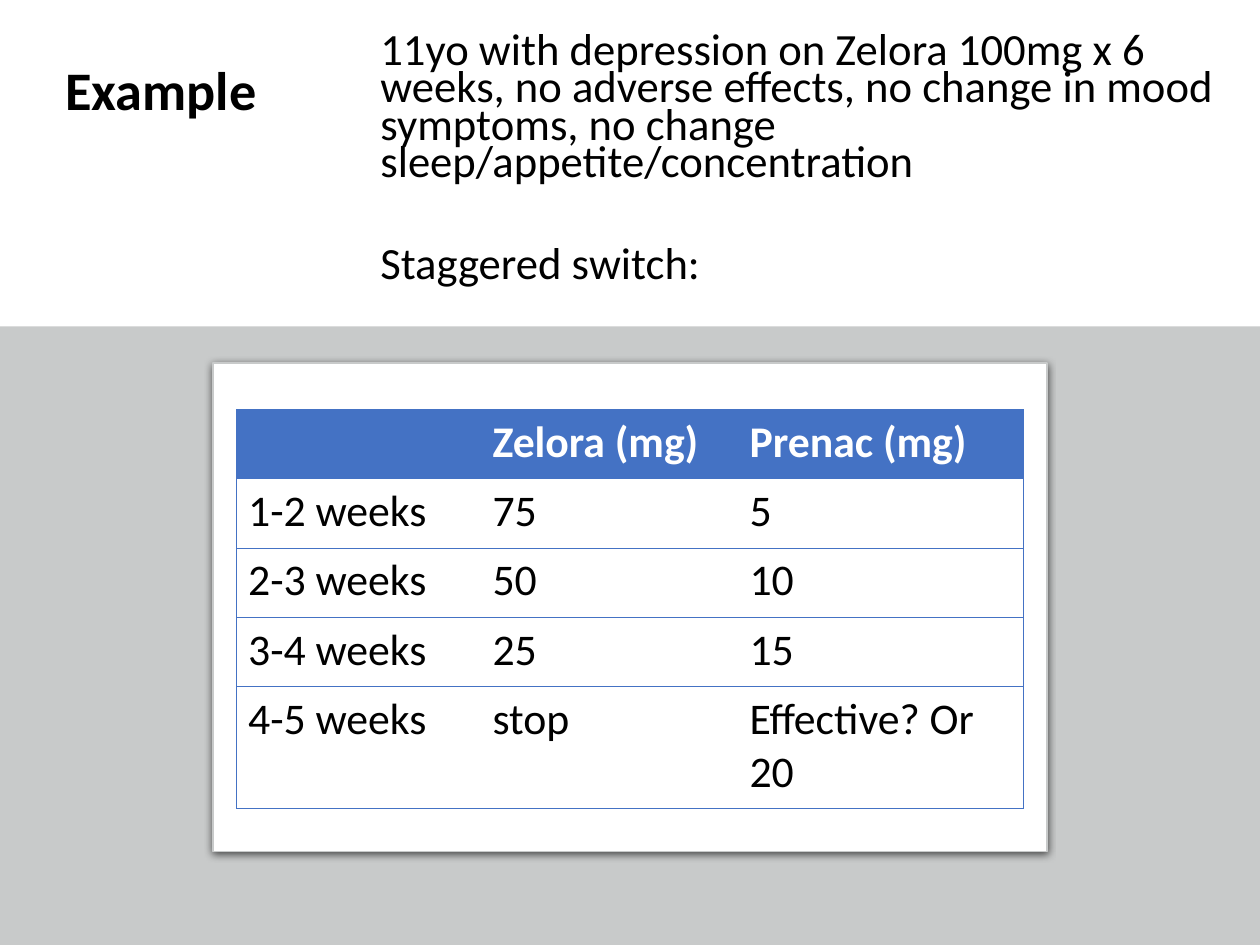
from lxml import etree
from pptx import Presentation
from pptx.dml.color import RGBColor
from pptx.enum import shapes, text
from pptx.oxml import ns
from pptx.util import Inches, Pt

TITLE = "Example"
CASE = [
    "11yo with depression on Zelora 100mg x 6 weeks, no adverse effects, "
    "no change in mood symptoms, no change sleep/appetite/concentration",
    "Staggered switch:",
]
SCHEDULE = [
    ("", "Zelora (mg)", "Prenac (mg)"),
    ("1-2 weeks", "75", "5"),
    ("2-3 weeks", "50", "10"),
    ("3-4 weeks", "25", "15"),
    ("4-5 weeks", "stop", "Effective? Or 20"),
]
COLUMNS = (1.94, 2.04, 2.26)
ROWS = (0.55, 0.55, 0.55, 0.55, 0.97)
THEME = {
    "font": "Calibri", "title": 31, "body": 25.5, "table": 25,
    "ink": "000000", "paper": "FFFFFF", "band": "C8CACA", "accent": "4472C4",
}


def color(role):
    return RGBColor.from_string(THEME[role])


def box(left, top, width, height):
    return [Inches(n) for n in (left, top, width, height)]


def style(paragraph, size, ink="ink", bold=False):
    font = paragraph.font
    font.name, font.size, font.bold = THEME["font"], Pt(THEME[size]), bold
    font.color.rgb = color(ink)


def add_panel(slide, kind, place, fill):
    panel = slide.shapes.add_shape(kind, *box(*place))
    panel.shadow.inherit = False
    panel.fill.solid()
    panel.fill.fore_color.rgb = color(fill)
    panel.line.fill.background()
    return panel


def add_soft_shadow(shape):
    effects = shape._element.spPr.find(ns.qn("a:effectLst"))
    shadow = etree.SubElement(effects, ns.qn("a:outerShdw"), blurRad=str(Pt(4.5)),
                              dist=str(Pt(1.5)), dir="5400000", rotWithShape="0")
    ink = etree.SubElement(shadow, ns.qn("a:srgbClr"), val=THEME["ink"])
    etree.SubElement(ink, ns.qn("a:alpha"), val="63000")


def set_borders(cell, drawn):
    """Rule the sides named in drawn (of L, R, T, B) and clear the others."""
    properties = cell._tc.get_or_add_tcPr()
    for side in "LRTB":
        line = etree.SubElement(properties, ns.qn(f"a:ln{side}"), w=str(Pt(0.5)))
        if side in drawn:
            fill = etree.SubElement(line, ns.qn("a:solidFill"))
            etree.SubElement(fill, ns.qn("a:srgbClr"), val=THEME["accent"])
        else:
            etree.SubElement(line, ns.qn("a:noFill"))


def add_title(slide):
    title = slide.shapes.title
    title.left, title.top, title.width, title.height = box(0.42, -0.19, 3.06, 1.85)
    frame = title.text_frame
    frame.text = TITLE
    frame.vertical_anchor = text.MSO_ANCHOR.MIDDLE
    heading = frame.paragraphs[0]
    heading.alignment, heading.line_spacing = text.PP_ALIGN.LEFT, 0.9
    style(heading, "title", bold=True)


def add_case(slide):
    frame = slide.shapes.add_textbox(*box(2.92, 0.23, 6.92, 2.36)).text_frame
    frame.word_wrap = True
    frame.text = "\n".join(CASE)
    for paragraph, gap in zip(frame.paragraphs, (0, 36.8)):
        paragraph.line_spacing, paragraph.space_before = 0.7, Pt(gap)
        style(paragraph, "body")


def add_schedule(slide):
    place = box(1.88, 3.25, sum(COLUMNS), sum(ROWS))
    table = slide.shapes.add_table(len(ROWS), len(COLUMNS), *place).table
    table.horz_banding = False
    for column, width in zip(table.columns, COLUMNS):
        column.width = Inches(width)
    for r, (row, height, entries) in enumerate(zip(table.rows, ROWS, SCHEDULE)):
        row.height = Inches(height)
        header = r == 0
        for c, (cell, entry) in enumerate(zip(row.cells, entries)):
            cell.text = entry
            cell.margin_left = cell.margin_right = Inches(0.09)
            style(cell.text_frame.paragraphs[0], "table",
                  "paper" if header else "ink", header)
            outer = {0: "L", len(COLUMNS) - 1: "R"}.get(c, "")
            set_borders(cell, "TB" + outer)
            cell.fill.solid()
            cell.fill.fore_color.rgb = color("accent" if header else "paper")


def main():
    deck = Presentation()
    deck.slide_width, deck.slide_height = Inches(10), Inches(7.5)
    slide = deck.slides.add_slide(deck.slide_layouts[5])
    add_title(slide)
    add_case(slide)
    add_panel(slide, shapes.MSO_SHAPE.RECTANGLE, (0, 2.59, 10, 4.91), "band")
    card = add_panel(slide, shapes.MSO_SHAPE.ROUNDED_RECTANGLE,
                     (1.69, 2.88, 6.62, 3.88), "paper")
    card.adjustments[0] = 0
    card.line.color.rgb = color("band")
    card.line.width = Pt(0.75)
    add_soft_shadow(card)
    add_schedule(slide)
    deck.save("out.pptx")


if __name__ == "__main__":
    main()
